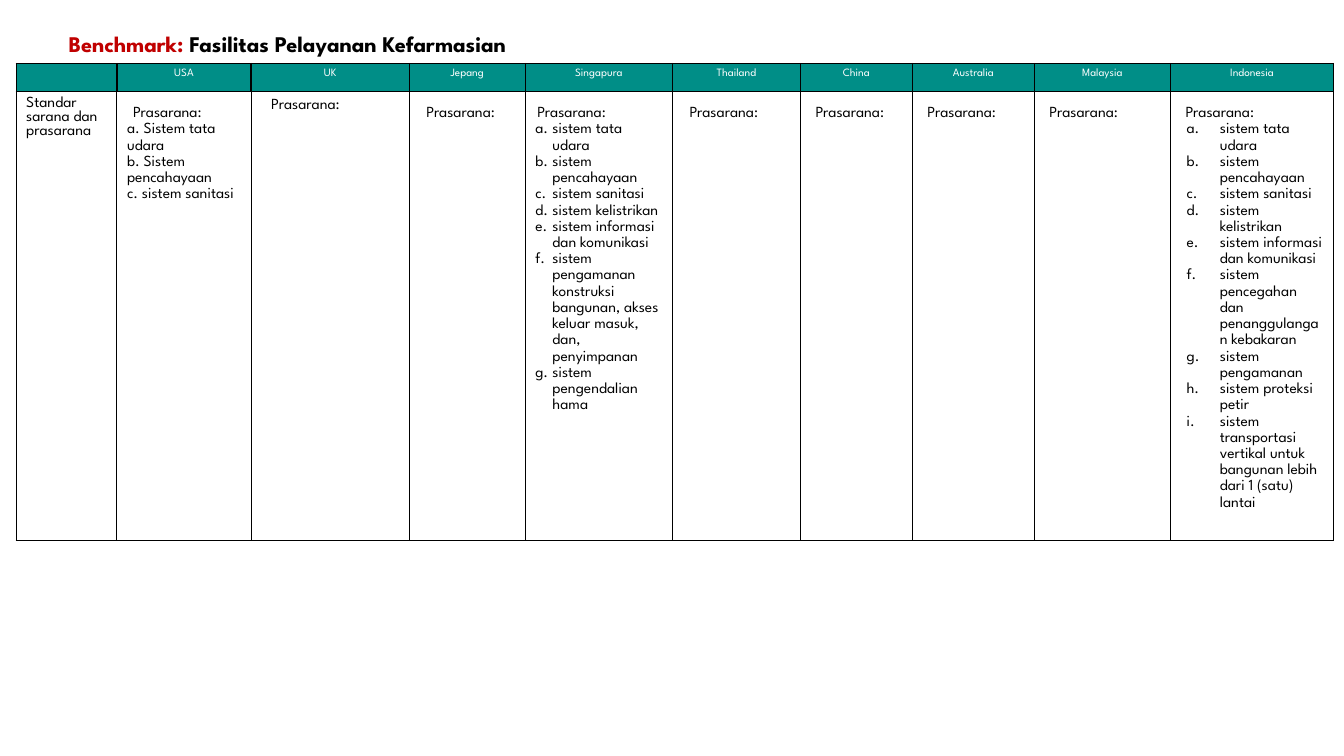
from lxml.etree import SubElement
from pptx import Presentation
from pptx.dml.color import RGBColor
from pptx.enum.text import MSO_ANCHOR as Anchor, MSO_AUTO_SIZE as AutoSize, PP_ALIGN as Align
from pptx.oxml.ns import qn
from pptx.util import Inches, Pt

FONT = "League Spartan"
TEAL, WHITE, BLACK, RED = "008E87", "FFFFFF", "000000", "C00000"
TITLE = [("Benchmark: ", RED), ("Fasilitas Pelayanan Kefarmasian", BLACK)]
ROW_LABEL = "Standar sarana dan prasarana"
HEADING = "Prasarana:"
HEADER_HEIGHT, BODY_HEIGHT = 0.28, 4.45
LABEL_WIDTH = 1

# country, width, left margin, top margin, heading indent
COUNTRIES = [
    ("USA", 1.33, 0.1, 0.13, 0.06),
    ("UK", 1.57, 0.1, 0.05, 0.1),
    ("Jepang", 1.15, 0.07, 0.13, 0.1),
    ("Singapura", 1.46, 0.07, 0.13, 0.05),
    ("Thailand", 1.27, 0.07, 0.13, 0.1),
    ("China", 1.11, 0.1, 0.13, 0.05),
    ("Australia", 1.21, 0.1, 0.13, 0.05),
    ("Malaysia", 1.35, 0.1, 0.13, 0.05),
    ("Indonesia", 1.62, 0.1, 0.13, 0.05),
]
PLAIN_ITEMS = {
    "USA": ["a. Sistem tata udara", "b. Sistem pencahayaan", "c. sistem sanitasi"],
}
COMMON_ITEMS = [
    "sistem tata udara",
    "sistem pencahayaan",
    "sistem sanitasi",
    "sistem kelistrikan",
    "sistem informasi dan komunikasi",
]
LETTERED_ITEMS = {
    "Singapura": (0.2, -0.17, COMMON_ITEMS + [
        "sistem pengamanan konstruksi bangunan, akses keluar masuk, dan, penyimpanan",
        "sistem pengendalian hama",
    ]),
    "Indonesia": (0.39, -0.33, COMMON_ITEMS + [
        "sistem pencegahan dan penanggulangan kebakaran",
        "sistem pengamanan",
        "sistem proteksi petir",
        "sistem transportasi vertikal untuk bangunan lebih dari 1 (satu) lantai",
    ]),
}
THICK_SIDES = {
    (0, 0): "LRTB", (0, 2): "LRTB", (0, 1): "LRT", (0, 3): "LT",
    (1, 0): "LTB", (1, 2): "TRB", (1, 3): "L",
}


def color(value):
    return RGBColor.from_string(value)


def add_span(para, text, size, value, bold=False):
    span = para.add_run()
    span.text = text
    span.font.name = FONT
    span.font.size = Pt(size)
    span.font.bold = bold
    span.font.color.rgb = color(value)


def style_cell(cell, fill, thick, left=0.1, top=0.05):
    cell.margin_left, cell.margin_right = Inches(left), Inches(0.1)
    cell.margin_top = cell.margin_bottom = Inches(top)
    properties = cell._tc.get_or_add_tcPr()
    for side in "LRTB":
        width = Pt(1 if side in thick else 0.75)
        line = SubElement(properties, qn(f"a:ln{side}"), w=str(width))
        SubElement(SubElement(line, qn("a:solidFill")), qn("a:srgbClr"), val=BLACK)
    cell.fill.solid()
    cell.fill.fore_color.rgb = color(fill)


def add_line(frame, text, indent=0, hanging=0, lettered=False):
    first = not frame.paragraphs[0].runs
    para = frame.paragraphs[0] if first else frame.add_paragraph()
    properties = para._p.get_or_add_pPr()
    properties.set("marL", str(Inches(indent)))
    properties.set("indent", str(Inches(hanging)))
    if lettered:
        SubElement(SubElement(properties, qn("a:buClr")), qn("a:srgbClr"), val=BLACK)
        SubElement(properties, qn("a:buFont"), typeface=FONT)
        SubElement(properties, qn("a:buAutoNum"), type="alphaLcPeriod")
    para.line_spacing = 1.15
    add_span(para, text, 11, BLACK)


def add_title(page):
    box = page.shapes.title
    box.left, box.top = Inches(0.58), Inches(0.26)
    box.width, box.height = Inches(12.75), Inches(0.38)
    frame = box.text_frame
    frame.auto_size = AutoSize.NONE
    frame.word_wrap = True
    frame.vertical_anchor = Anchor.MIDDLE
    para = frame.paragraphs[0]
    para.alignment = Align.LEFT
    para.line_spacing = 0.9
    for text, value in TITLE:
        add_span(para, text, 16, value, bold=True)


def add_benchmark_table(page):
    widths = [LABEL_WIDTH] + [country[1] for country in COUNTRIES]
    heights = [HEADER_HEIGHT, BODY_HEIGHT]
    table = page.shapes.add_table(
        len(heights), len(widths), Inches(0.16), Inches(0.63),
        Inches(sum(widths)), Inches(sum(heights))).table
    for column, width in zip(table.columns, widths):
        column.width = Inches(width)
    for row, height in zip(table.rows, heights):
        row.height = Inches(height)

    corner, label = table.cell(0, 0), table.cell(1, 0)
    style_cell(corner, TEAL, THICK_SIDES[0, 0])
    SubElement(corner.text_frame.paragraphs[0]._p, qn("a:endParaRPr"), sz="800")
    style_cell(label, WHITE, THICK_SIDES[1, 0])
    add_span(label.text_frame.paragraphs[0], ROW_LABEL, 11, BLACK)

    for index, (name, _, left, top, indent) in enumerate(COUNTRIES, 1):
        header, body = table.cell(0, index), table.cell(1, index)
        style_cell(header, TEAL, THICK_SIDES.get((0, index), "T"))
        para = header.text_frame.paragraphs[0]
        para.alignment = Align.CENTER
        add_span(para, name, 8, WHITE)

        style_cell(body, WHITE, THICK_SIDES.get((1, index), ""), left, top)
        frame = body.text_frame
        add_line(frame, HEADING, indent)
        for item in PLAIN_ITEMS.get(name, []):
            add_line(frame, item)
        item_indent, hanging, items = LETTERED_ITEMS.get(name, (0, 0, []))
        for item in items:
            add_line(frame, item, item_indent, hanging, lettered=True)


def main():
    deck = Presentation()
    deck.slide_width, deck.slide_height = Inches(13.33), Inches(7.5)
    page = deck.slides.add_slide(deck.slide_layouts.get_by_name("Title Only"))
    add_benchmark_table(page)
    add_title(page)
    deck.save("out.pptx")


if __name__ == "__main__":
    main()
